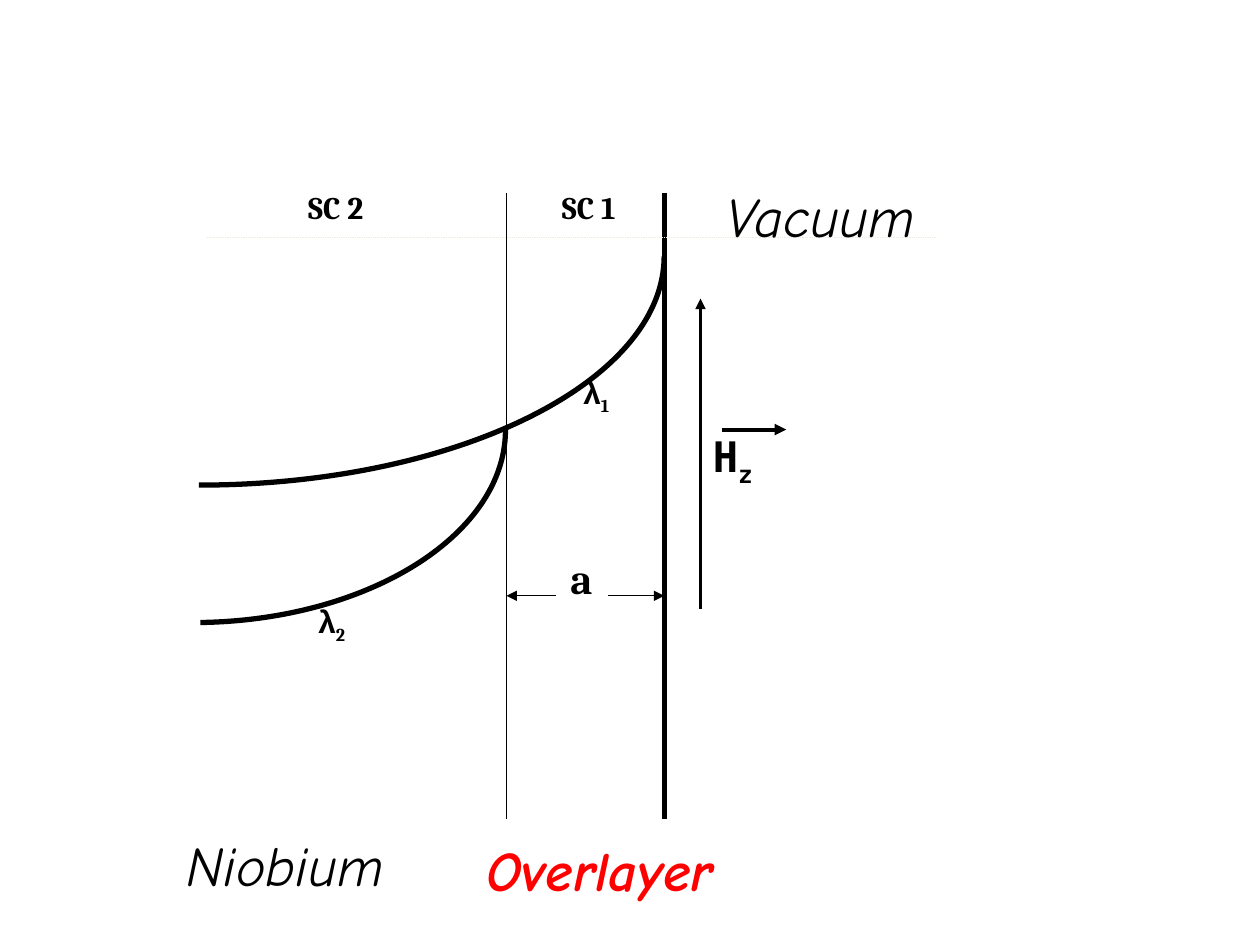
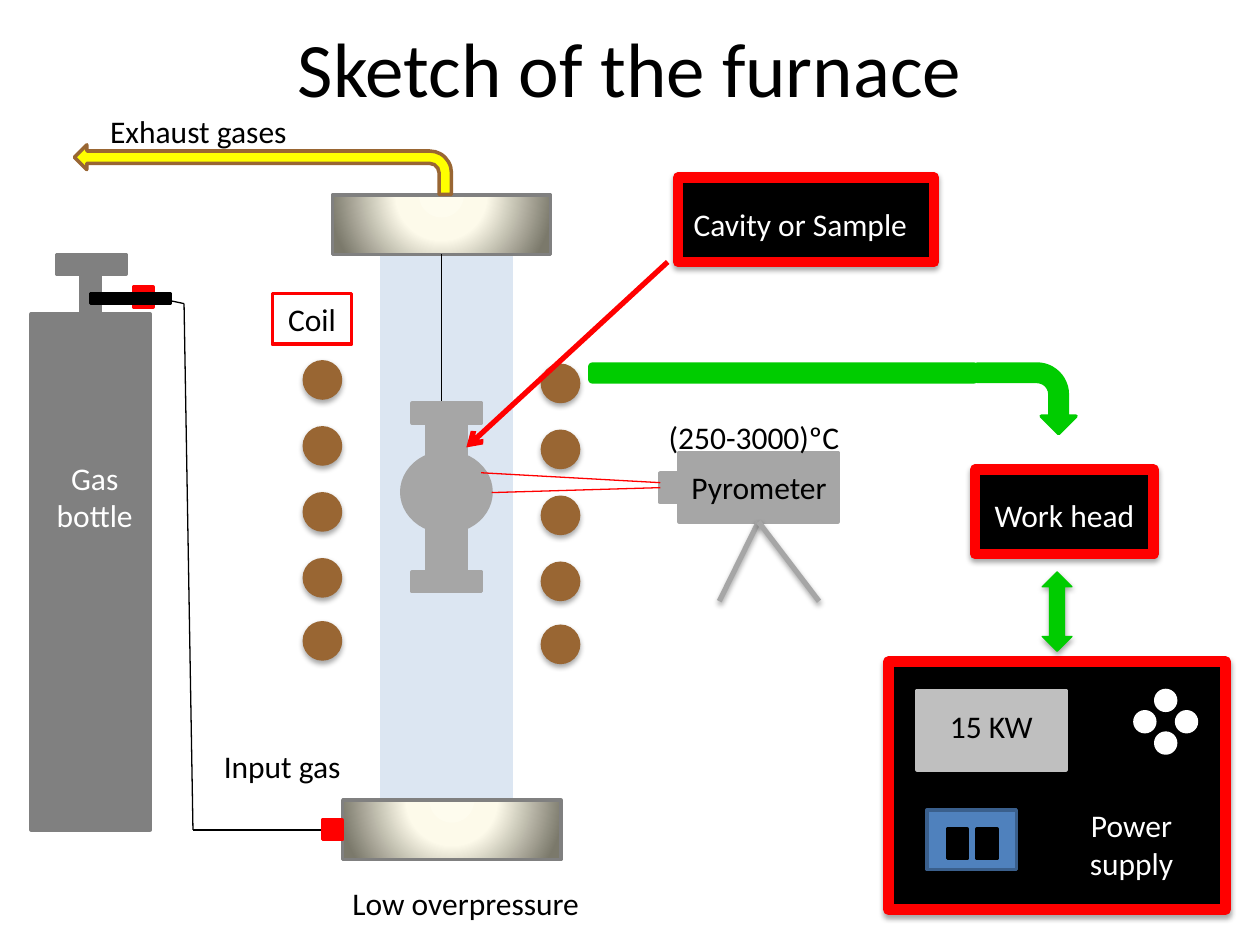
from dataclasses import dataclass
from typing import Optional

from lxml.etree import SubElement
from pptx import Presentation
from pptx.dml.color import RGBColor
from pptx.enum.dml import MSO_LINE
from pptx.enum.shapes import MSO_CONNECTOR, MSO_SHAPE
from pptx.enum.text import MSO_ANCHOR, PP_ALIGN
from pptx.oxml import parse_xml
from pptx.oxml.ns import nsdecls, qn
from pptx.util import Cm, Pt


@dataclass(frozen=True)
class Theme:
    black: str = "000000"
    white: str = "FFFFFF"
    red: str = "FF0000"
    green: str = "00CC00"
    yellow: str = "FFFF00"
    copper: str = "996633"
    steel: str = "808080"
    metal: str = "A6A6A6"
    display: str = "BFBFBF"
    glass: str = "DCE6F2"
    socket: str = "4F81BD"
    socket_edge: str = "3A5F8C"
    cream: str = "EEECE1"
    flange_stops: tuple = ((0, "FEFCEE"), (40, "FDFAEA"), (100, "7B796B"))
    body_font: str = "Calibri"
    symbol_font: str = "Cambria"
    greek_font: str = "Arial"
    field_font: str = "DejaVu Sans Mono"
    hand_font: str = "Comic Neue"
    title_size: int = 44
    region_size: int = 32
    symbol_size: int = 24
    label_size: int = 18


THEME = Theme()


@dataclass(frozen=True)
class Box:
    left: float
    top: float
    width: float
    height: float
    fill: str
    line: Optional[str] = None
    weight: float = 2
    kind: MSO_SHAPE = MSO_SHAPE.RECTANGLE
    shadow: bool = False
    rotation: float = 0


@dataclass(frozen=True)
class Wire:
    start: tuple[float, float]
    end: tuple[float, float]
    color: str = THEME.black
    weight: float = 0.75
    head: Optional[str] = None
    tail: Optional[str] = None
    dash: Optional[MSO_LINE] = None
    shadow: bool = False


@dataclass(frozen=True)
class Label:
    text: str
    left: float
    top: float
    width: float
    height: float = 1.02
    color: str = THEME.black
    align: PP_ALIGN = PP_ALIGN.CENTER
    anchor: MSO_ANCHOR = MSO_ANCHOR.TOP


def metal(left: float, top: float, width: float, height: float, color: str = THEME.metal,
          kind: MSO_SHAPE = MSO_SHAPE.RECTANGLE) -> Box:
    """A part whose outline has the colour of its fill."""
    return Box(left, top, width, height, color, color, kind=kind)


def panel(left: float, top: float, width: float, height: float) -> Box:
    """A black unit with a thick red frame."""
    return Box(left, top, width, height, THEME.black, THEME.red, 6, shadow=True)


def add_shadow(effects) -> None:
    shadow = SubElement(effects, qn("a:outerShdw"), blurRad="40000", dist="23000",
                        dir="5400000", rotWithShape="0")
    color = SubElement(shadow, qn("a:srgbClr"), val=THEME.black)
    SubElement(color, qn("a:alpha"), val="35000")


def draw_box(slide, box: Box):
    shape = slide.shapes.add_shape(box.kind, Cm(box.left), Cm(box.top),
                                   Cm(box.width), Cm(box.height))
    shape.rotation = box.rotation
    shape.fill.solid()
    shape.fill.fore_color.rgb = RGBColor.from_string(box.fill)
    if box.line:
        shape.line.color.rgb = RGBColor.from_string(box.line)
        shape.line.width = Pt(box.weight)
    else:
        shape.line.fill.background()
    shape.shadow.inherit = False
    if box.shadow:
        add_shadow(shape.element.spPr.find(qn("a:effectLst")))
    return shape


def draw_flange(slide, left: float, top: float):
    """A metal flange that is bright in the middle and dark at both ends."""
    shape = draw_box(slide, Box(left, top, 4.4, 1.2, THEME.white, THEME.steel))
    stops = "".join(f'<a:gs pos="{position * 1000}"><a:srgbClr val="{color}"/></a:gs>'
                    for position, color in THEME.flange_stops)
    gradient = parse_xml(
        f'<a:gradFill {nsdecls("a")} rotWithShape="1"><a:gsLst>{stops}</a:gsLst>'
        '<a:path path="circle"><a:fillToRect l="50000" t="-80000" r="50000" b="180000"/>'
        '</a:path></a:gradFill>')
    properties = shape.element.spPr
    properties.replace(properties.find(qn("a:solidFill")), gradient)
    return shape


def draw_wire(slide, wire: Wire, begin=None, end=None):
    """begin and end are (shape, connection site) pairs."""
    connector = slide.shapes.add_connector(
        MSO_CONNECTOR.STRAIGHT, *(Cm(value) for value in wire.start + wire.end))
    connector.line.color.rgb = RGBColor.from_string(wire.color)
    connector.line.width = Pt(wire.weight)
    if wire.dash:
        connector.line.dash_style = wire.dash
    for tag, arrow in (("a:headEnd", wire.head), ("a:tailEnd", wire.tail)):
        if arrow:
            SubElement(connector.get_or_add_ln(), qn(tag), type=arrow)
    effects = SubElement(connector.element.spPr, qn("a:effectLst"))
    if wire.shadow:
        add_shadow(effects)
    if begin:
        connector.begin_connect(*begin)
    if end:
        connector.end_connect(*end)
    return connector


def draw_curve(slide, *points: tuple[float, float]) -> None:
    """A cubic curve from its start, two control points and its end."""
    start, *others = [(Cm(x), Cm(y)) for x, y in points]
    builder = slide.shapes.build_freeform(*start)
    builder.add_line_segments(others, close=False)
    shape = builder.convert_to_shape()
    path = shape.element.spPr.find(".//" + qn("a:path"))
    curve = SubElement(path, qn("a:cubicBezTo"))
    for segment in path.findall(qn("a:lnTo")):
        curve.append(segment[0])
        path.remove(segment)
    shape.fill.background()
    shape.line.color.rgb = RGBColor.from_string(THEME.black)
    shape.line.width = Pt(3)
    shape.shadow.inherit = False


def write(frame, text: str, *, size: float = THEME.label_size, font: str = THEME.body_font,
          color: str = THEME.black, bold: bool = False, italic: bool = False,
          align: PP_ALIGN = PP_ALIGN.LEFT, anchor: MSO_ANCHOR = MSO_ANCHOR.TOP,
          subscript: str = "", subscript_font: Optional[str] = None) -> None:
    frame.word_wrap = True
    frame.vertical_anchor = anchor
    frame.text = text
    for paragraph in frame.paragraphs:
        paragraph.alignment = align
    if subscript:
        run = frame.paragraphs[-1].add_run()
        run.text = subscript
        run._r.get_or_add_rPr().set("baseline", "-25000")
    for paragraph in frame.paragraphs:
        for index, run in enumerate(paragraph.runs):
            run.font.name = subscript_font if index and subscript_font else font
            run.font.size = Pt(size)
            run.font.bold = bold
            run.font.italic = italic
            run.font.color.rgb = RGBColor.from_string(color)


def draw_label(slide, label: Label, **text_format) -> None:
    text_box = slide.shapes.add_textbox(Cm(label.left), Cm(label.top),
                                        Cm(label.width), Cm(label.height))
    write(text_box.text_frame, label.text, color=label.color, align=label.align,
          anchor=label.anchor, **text_format)


def build_field_slide(presentation) -> None:
    slide = presentation.slides.add_slide(presentation.slide_layouts[6])
    surface, interface, top, bottom = 13.39, 10.21, 3.89, 16.51
    left = PP_ALIGN.LEFT
    symbol = {"font": THEME.symbol_font, "bold": True}
    draw_wire(slide, Wire((surface, top), (surface, bottom), weight=3))
    draw_wire(slide, Wire((interface, top), (interface, bottom), weight=1))
    draw_label(slide, Label("SC 1", 10.36, 3.66, 3.02, 1.27), **symbol)
    draw_label(slide, Label("SC 2", 5.18, 3.66, 3.18, 1.27), **symbol)

    draw_wire(slide, Wire((interface, 12.01), (surface, 12.01), head="triangle", tail="triangle"))
    draw_box(slide, Box(11.23, 11.35, 1.02, 1, THEME.white, THEME.white, 0.75))
    draw_label(slide, Label("a", 10.64, 11.02, 2.16, 1.57), size=THEME.symbol_size, **symbol)

    draw_curve(slide, (4.01, 9.78), (9.19, 9.78), (surface, 7.7), (surface, 5.16))
    draw_curve(slide, (4.04, 12.55), (7.47, 12.5), (10.24, 10.74), (10.19, 8.61))
    for subscript, x, y in (("1", 11.51, 7.39), ("2", 6.17, 12.01)):
        draw_label(slide, Label("λ", x, y, 2.03, 1.27, align=left), font=THEME.greek_font,
                   bold=True, subscript=subscript, subscript_font=THEME.symbol_font)

    draw_wire(slide, Wire((4.17, 4.78), (18.87, 4.78), THEME.cream, 0.5, dash=MSO_LINE.ROUND_DOT))
    draw_wire(slide, Wire((14.12, 6.02), (14.12, 12.27), weight=1.5, head="triangle"))
    draw_label(slide, Label("H", 14.12, 8.56, 3.02, 1.57, align=left), size=THEME.symbol_size,
               font=THEME.field_font, bold=True, subscript="z")
    draw_wire(slide, Wire((14.55, 8.66), (15.85, 8.66), weight=2.25, tail="triangle"))

    for region, bold in (
        (Label("Vacuum", 14.4, 3.53, 5.49, 2.01, align=left), False),
        (Label("Niobium", 3.51, 16.61, 5.41, 1.63, align=left), False),
        (Label("Overlayer", 9.55, 16.71, 5.41, 1.63, THEME.red, left), True),
    ):
        draw_label(slide, region, size=THEME.region_size, font=THEME.hand_font,
                   bold=bold, italic=True)


def draw_coil(slide, left: float, top: float) -> None:
    for offset in (0, 1.33, 2.66, 3.99, 5.26):
        draw_box(slide, Box(left, top + offset, 0.8, 0.8, THEME.copper,
                            kind=MSO_SHAPE.OVAL, shadow=True))


def draw_gas_line(slide, bottom_flange) -> None:
    bend, corner = (3.71, 6.12), (3.89, 16.73)
    draw_wire(slide, Wire(corner, (6.91, 16.73)), end=(bottom_flange, 1))
    draw_box(slide, metal(6.5, 16.53, 0.4, 0.4, THEME.red))
    draw_wire(slide, Wire(corner, bend))
    for part in ((0.63, 6.33, 2.4, 10.4), (1.62, 5.53, 0.4, 1.2), (1.14, 5.13, 1.4, 0.4)):
        draw_box(slide, metal(*part, THEME.steel))
    valve = draw_box(slide, metal(2.69, 5.79, 0.4, 0.4, THEME.red))
    draw_box(slide, metal(1.83, 5.92, 1.6, 0.2, THEME.black))
    draw_wire(slide, Wire((3.09, 5.99), bend), begin=(valve, 3))


def draw_power_supply(slide) -> None:
    draw_box(slide, panel(17.91, 13.34, 6.8, 5))
    draw_box(slide, metal(18.49, 13.92, 3, 1.6, THEME.display))
    for across, down in ((0, -1), (1, 0), (-1, 0), (0, 1)):
        draw_box(slide, metal(23.3 + 0.42 * across, 14.35 + 0.43 * down, 0.4, 0.4,
                              THEME.white, MSO_SHAPE.OVAL))
    draw_box(slide, Box(18.69, 16.33, 1.8, 1.2, THEME.socket, THEME.socket_edge))
    for slot in (19.1, 19.7):
        draw_box(slide, metal(slot, 16.71, 0.4, 0.6, THEME.black))


def draw_pyrometer(slide) -> None:
    body = draw_box(slide, metal(13.69, 9.12, 3.2, 1.4))
    lens = draw_box(slide, metal(13.31, 9.53, 0.8, 0.6))
    for foot in (14.5, 16.51):
        draw_wire(slide, Wire((15.29, 10.52), (foot, 12.12), THEME.metal, 3, shadow=True),
                  begin=(body, 2))
    draw_wire(slide, Wire((13.31, 9.83), (9.91, 9.93), THEME.red), begin=(lens, 1))
    draw_wire(slide, Wire((13.31, 9.73), (9.7, 9.53), THEME.red))


def build_furnace_slide(presentation) -> None:
    slide = presentation.slides.add_slide(presentation.slide_layouts[5])
    title = slide.shapes.title
    title.left, title.top, title.width, title.height = Cm(1.27), Cm(-0.25), Cm(22.86), Cm(3.18)
    write(title.text_frame, "Sketch of the furnace", size=THEME.title_size,
          align=PP_ALIGN.CENTER, anchor=MSO_ANCHOR.MIDDLE)

    draw_coil(slide, 6.1, 7.26)
    draw_box(slide, metal(7.7, 4.52, 2.6, 12.2, THEME.glass))
    top_flange = draw_flange(slide, 6.7, 3.93)
    draw_gas_line(slide, draw_flange(slide, 6.91, 16.13))
    exhaust = draw_box(slide, Box(1.5, 2.92, 7.6, 1, THEME.yellow, THEME.copper,
                                  kind=MSO_SHAPE.BENT_ARROW, rotation=180))
    exhaust.element.spPr.find(qn("a:xfrm")).set("flipV", "1")

    for neck in (8.33, 10.13):
        draw_box(slide, metal(8.61, neck, 0.8, 1.4))
    draw_box(slide, metal(8.1, 9.12, 1.8, 1.6, kind=MSO_SHAPE.OVAL))
    draw_wire(slide, Wire((8.9, 5.13), (8.9, 8.33)), begin=(top_flange, 2))
    draw_box(slide, panel(19.66, 9.47, 3.6, 1.7))
    draw_power_supply(slide)
    draw_pyrometer(slide)
    draw_coil(slide, 10.9, 7.33)

    draw_box(slide, Box(19.99, 7.04, 1.4, 2, THEME.green, THEME.green,
                        kind=MSO_SHAPE.BENT_ARROW, rotation=90))
    draw_box(slide, metal(11.89, 7.34, 7.8, 0.36, THEME.green, MSO_SHAPE.ROUNDED_RECTANGLE))
    draw_box(slide, Box(21.01, 11.53, 0.6, 1.6, THEME.green, THEME.green, 0.75,
                        MSO_SHAPE.UP_DOWN_ARROW, shadow=True))
    coil_tag = draw_box(slide, Box(5.49, 5.92, 1.6, 1.02, THEME.white, THEME.red))
    write(coil_tag.text_frame, "Coil", align=PP_ALIGN.CENTER)
    for cap in (8.13, 11.53):
        draw_box(slide, metal(8.31, cap, 1.4, 0.4))
    draw_box(slide, panel(13.67, 3.58, 5.16, 1.7))

    white, left, middle = THEME.white, PP_ALIGN.LEFT, MSO_ANCHOR.MIDDLE
    for label in (
        Label("Work head", 19.1, 9.88, 4.72, color=white, anchor=middle),
        Label("15 KW", 18.9, 14.12, 2.8, align=left),
        Label("Power\nsupply", 21.31, 16.13, 3, 1.8, white),
        Label("Pyrometer", 13.69, 9.32, 3.81, align=left),
        Label("Gas\nbottle", 0.51, 9.12, 2.8, 1.8, white),
        Label("Low overpressure", 5.49, 17.7, 7.8),
        Label("(250-3000)ºC", 12.7, 8.31, 5),
        Label("Exhaust gases", 1.5, 2.13, 5),
        Label("Input gas", 3.89, 14.94, 3.6),
        Label("Cavity or Sample", 12.78, 3.61, 6.71, 1.8, white, anchor=middle),
    ):
        draw_label(slide, label)
    draw_wire(slide, Wire((13.46, 5.28), (9.4, 9.02), THEME.red, 3, tail="arrow"))


def main() -> None:
    presentation = Presentation()
    presentation.slide_width, presentation.slide_height = Cm(25.4), Cm(19.05)
    build_field_slide(presentation)
    build_furnace_slide(presentation)
    presentation.save("out.pptx")


if __name__ == "__main__":
    main()
